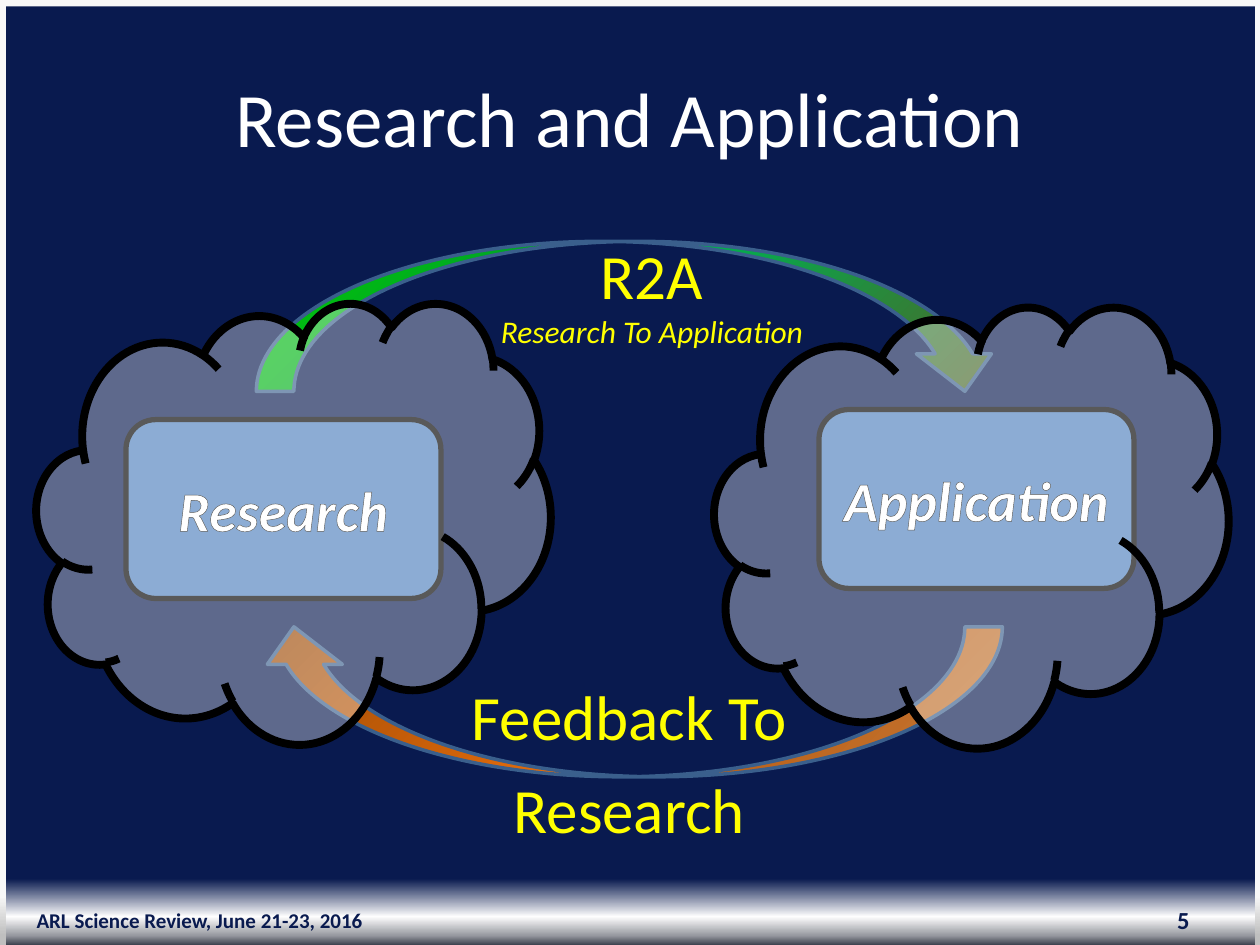
from lxml import etree
from pptx import Presentation
from pptx import util as u
from pptx.dml.color import RGBColor
from pptx.enum import shapes, text
from pptx.oxml.ns import qn

NAVY, WHITE, BLACK, YELLOW = "091A4F", "FFFFFF", "000000", "FFFF00"
SHAPE = shapes.MSO_SHAPE
ALIGN = text.PP_ALIGN
ANCHOR = text.MSO_ANCHOR


def color(hex_code):
    return RGBColor.from_string(hex_code)


class Board:
    """Draws styled elements on one slide, measured on a 100 by 75 grid."""

    font = "Calibri"
    columns, rows = 100, 75

    def __init__(self, deck):
        self.column = deck.slide_width / self.columns
        self.row = deck.slide_height / self.rows
        self.slide = deck.slides.add_slide(deck.slide_layouts[5])

    def place(self, left, top, width, height):
        return [round(n * unit) for n, unit in zip(
            (left, top, width, height), (self.column, self.row) * 2)]

    def gradient(self, fill, element, stops, angle):
        fill.gradient()
        fill.gradient_angle = (360 - angle) % 360
        stop_list = element.find(".//" + qn("a:gsLst"))
        for old_stop in list(stop_list):
            stop_list.remove(old_stop)
        for percent, hex_code in stops:
            stop = etree.SubElement(stop_list, qn("a:gs"), pos=str(percent * 1000))
            etree.SubElement(stop, qn("a:srgbClr"), val=hex_code)

    def background(self, stops, angle):
        self.gradient(self.slide.background.fill, self.slide.element, stops, angle)

    def title(self, wording, box):
        heading = self.slide.shapes.title
        heading.left, heading.top, heading.width, heading.height = self.place(*box)
        heading.text_frame.vertical_anchor = ANCHOR.MIDDLE
        self.set_lines(heading.text_frame, [(wording, 44, {})], WHITE)

    def set_lines(self, frame, lines, hex_code, align=ALIGN.CENTER):
        frame.text = "\n".join(wording for wording, _, _ in lines)
        for paragraph, (_, size, style) in zip(frame.paragraphs, lines):
            paragraph.alignment = align
            font = paragraph.runs[0].font
            font.name, font.size = self.font, u.Pt(size)
            font.color.rgb = color(hex_code)
            font.bold = style.get("bold", False)
            font.italic = style.get("italic", False)
            paragraph.space_before = u.Pt(style.get("gap", 0))

    def label(self, box, lines, hex_code, align=ALIGN.CENTER, grow=False):
        frame = self.slide.shapes.add_textbox(*self.place(*box)).text_frame
        frame.word_wrap = not grow
        frame.vertical_anchor = ANCHOR.TOP if grow else ANCHOR.MIDDLE
        if grow:
            frame.auto_size = text.MSO_AUTO_SIZE.SHAPE_TO_FIT_TEXT
        self.set_lines(frame, lines, hex_code, align)

    def shape(self, preset, box, fill, line=None, weight=0, angle=90):
        form = self.slide.shapes.add_shape(preset, *self.place(*box))
        form.shadow.inherit = False
        if isinstance(fill, str):
            form.fill.solid()
            form.fill.fore_color.rgb = color(fill)
        else:
            self.gradient(form.fill, form.element.spPr, fill, angle)
        if line:
            form.line.color.rgb = color(line)
            form.line.width = u.Pt(weight)
        else:
            form.line.fill.background()
        return form

    def topic(self, wording, left, top):
        card = self.shape(SHAPE.ROUNDED_RECTANGLE, (left, top, 25, 14.2),
                          "4F81BD", BLACK, 3)
        frame = card.text_frame
        frame.word_wrap = True
        frame.vertical_anchor = ANCHOR.MIDDLE
        self.set_lines(frame, [(wording, 32, {"bold": True, "italic": True})], WHITE)
        properties = card.element.find(".//" + qn("a:rPr"))
        outline = etree.Element(qn("a:ln"), w=str(int(u.Pt(0.75))))
        paint = etree.SubElement(outline, qn("a:solidFill"))
        etree.SubElement(paint, qn("a:srgbClr"), val=BLACK)
        properties.insert(0, outline)

    def flow(self, top, stops, flip):
        arrow = self.shape(SHAPE.CURVED_RIGHT_ARROW, (44, top, 11.9, 59.2),
                           stops, "3A5F8C", 2, 225)
        arrow.rotation = 90
        arrow.element.spPr.find(qn("a:xfrm")).set(flip, "1")

    def cloud(self, left, top):
        form = self.shape(SHAPE.CLOUD, (left, top, 40.8, 35), WHITE, BLACK, 4.5)
        tint = form.element.spPr.find(qn("a:solidFill")).find(qn("a:srgbClr"))
        etree.SubElement(tint, qn("a:alpha"), val="35000")


def main():
    deck = Presentation()
    deck.slide_width, deck.slide_height = u.Inches(10), u.Inches(7.5)
    board = Board(deck)

    board.background([(93, NAVY), (97, "FEFEFE"), (99, "9799A0"), (100, "3C414E")], 90)
    edge = [(0, "F8F8F8"), (95, "F5F5F5"), (99, "BFBFBF")]
    for left in (0, 99.6):
        board.shape(SHAPE.RECTANGLE, (left, 0, 0.5, 75), edge)
    board.shape(SHAPE.RECTANGLE, (0.2, 0, 99.8, 0.5), "F8F8F8")

    board.title("Research and Application", (5, 3, 90, 12.5))
    board.label((0, 71, 31.7, 4),
                [("ARL Science Review, June 21-23, 2016", 12, {"bold": True})], NAVY)
    board.label((72.1, 71, 23.3, 4), [("5", 14, {"bold": True})], NAVY, ALIGN.RIGHT)

    board.topic("Research", 10, 33.3)
    board.topic("Application", 65, 32.5)
    board.flow(-4.5, [(0, "4F6228"), (50, "00B050"), (100, "00FF00")], "flipV")
    board.flow(26.1, [(0, "984807"), (50, "E46C0A"), (100, "F79646")], "flipH")

    board.label((38.3, 18.3, 26.9, 10.1),
                [("R2A", 36, {}), ("Research To Application", 18, {"italic": True})],
                YELLOW, grow=True)
    board.label((36.1, 53.3, 27.7, 14.5),
                [("Feedback To", 36, {}), ("Research", 36, {"gap": 9.8})],
                YELLOW, grow=True)

    for left, top in ((2.9, 24), (56.7, 24.3)):
        board.cloud(left, top)

    deck.save("out.pptx")


if __name__ == "__main__":
    main()
